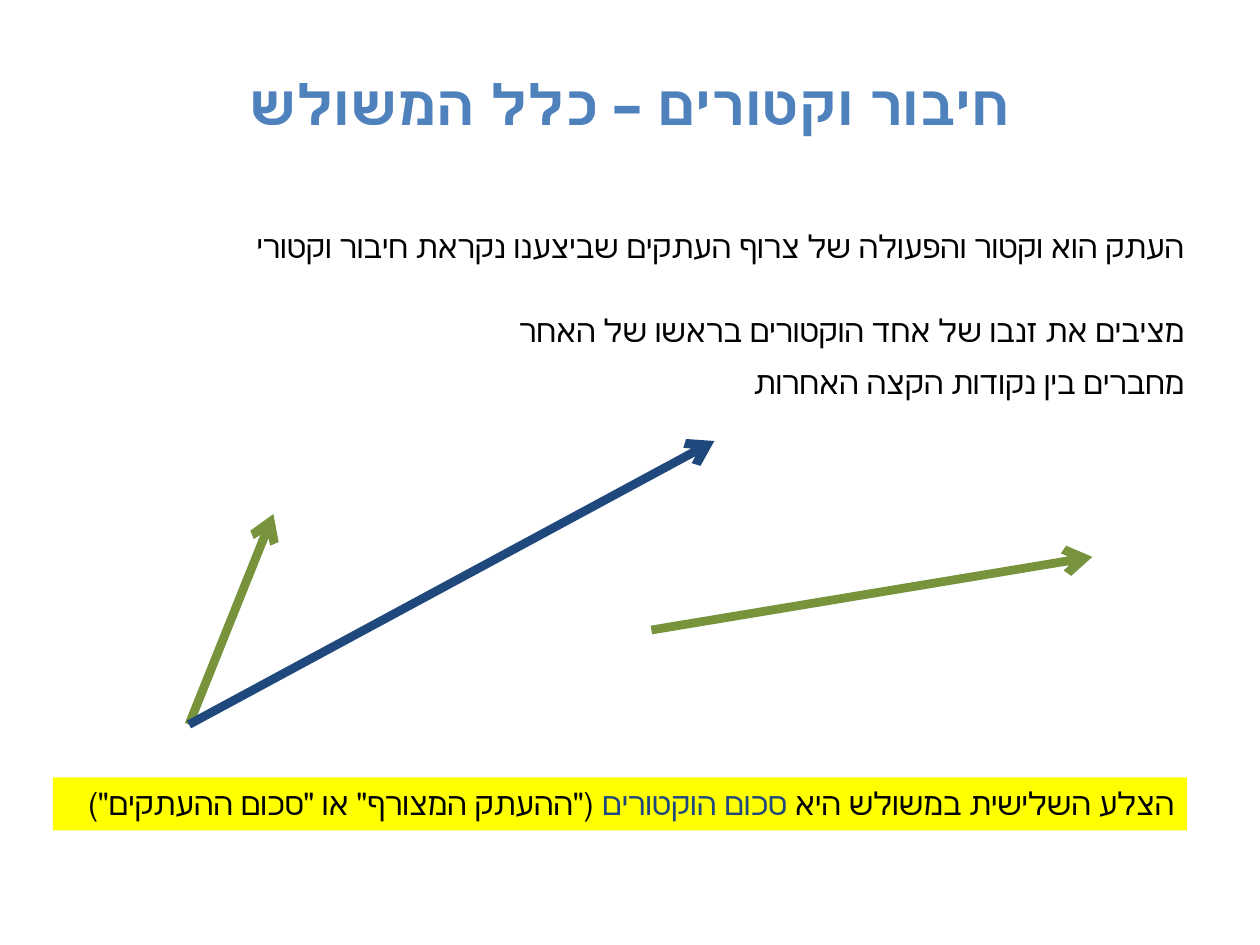
import pptx
import pptx.util
import pptx.dml.color
import pptx.enum.dml
import pptx.enum.lang
import pptx.enum.shapes
import pptx.enum.text
import pptx.oxml
import pptx.oxml.ns

Inches = pptx.util.Inches
Align = pptx.enum.text.PP_ALIGN
Anchor = pptx.enum.text.MSO_ANCHOR

FONT = "Calibri"
BLACK, BLUE, NAVY = "000000", "4F81BD", "1F497D"
GREEN, YELLOW = "77933C", "FFFF00"


def color(value):
    """Turn a hex string into an RGB colour."""
    return pptx.dml.color.RGBColor.from_string(value)


def add_child(parent, tag, **attributes):
    """Append an empty DrawingML element with the given attributes."""
    child = pptx.oxml.parse_xml(f"<a:{tag} {pptx.oxml.ns.nsdecls('a')}/>")
    for name, value in attributes.items():
        child.set(name, value)
    parent.append(child)


def write_line(shape, parts, size, alignment, anchor, bold=False):
    """Write one right-to-left paragraph made of (text, colour) parts."""
    frame = shape.text_frame
    frame.word_wrap = True
    frame.vertical_anchor = anchor
    paragraph = frame.paragraphs[0]
    paragraph.alignment = alignment
    paragraph.space_before = pptx.util.Pt(size * 0.2)
    paragraph._p.get_or_add_pPr().set("rtl", "1")
    for text, text_color in parts:
        run = paragraph.add_run()
        run.text = text
        font = run.font
        font.name = FONT
        font.size = pptx.util.Pt(size)
        font.bold = bold
        font.color.rgb = color(text_color)
        font.language_id = pptx.enum.lang.MSO_LANGUAGE_ID.HEBREW


def add_title(slide, left, top, width, height):
    """Add the centred slide title."""
    shape = slide.shapes.add_textbox(left, top, width, height)
    parts = [("חיבור וקטורים – כלל המשולש", BLUE)]
    write_line(shape, parts, 32, Align.CENTER, Anchor.MIDDLE, bold=True)


def add_explanations(slide, left, top, width, height):
    """Add the definition and the two construction steps."""
    lines = [
        (0, "העתק הוא וקטור והפעולה של צרוף העתקים שביצענו נקראת חיבור וקטורי"),
        (0.67, "מציבים את זנבו של אחד הוקטורים בראשו של האחר"),
        (1.08, "מחברים בין נקודות הקצה האחרות"),
    ]
    for offset, text in lines:
        shape = slide.shapes.add_textbox(left, top + Inches(offset), width, height)
        write_line(shape, [(text, BLACK)], 18, Align.RIGHT, Anchor.TOP)


def add_vectors(slide, left, top):
    """Draw the two green vectors and their navy sum."""
    vectors = [
        ((0, 2.25), (0.67, 0.58), GREEN),
        ((3.67, 1.5), (7.17, 0.92), GREEN),
        ((0, 2.25), (4.17, 0), NAVY),
    ]
    for (tail_x, tail_y), (head_x, head_y), line_color in vectors:
        vector = slide.shapes.add_connector(
            pptx.enum.shapes.MSO_CONNECTOR.STRAIGHT,
            left + Inches(tail_x), top + Inches(tail_y),
            left + Inches(head_x), top + Inches(head_y))
        vector.line.color.rgb = color(line_color)
        vector.line.width = pptx.util.Pt(5)
        add_child(vector.line._get_or_add_ln(), "tailEnd", type="arrow")
        add_child(vector._element.spPr, "effectLst")


def add_conclusion(slide, left, top, width, height):
    """Add the yellow bar that names the vector sum."""
    bar = slide.shapes.add_shape(
        pptx.enum.shapes.MSO_SHAPE.RECTANGLE, left, top, width, height)
    bar.shadow.inherit = False
    bar.fill.solid()
    bar.fill.fore_color.rgb = color(YELLOW)
    bar.line.fill.background()
    parts = [
        ("הצלע השלישית במשולש היא ", BLACK),
        ("סכום הוקטורים ", NAVY),
        ('("ההעתק המצורף" או "סכום ההעתקים")', BLACK),
    ]
    write_line(bar, parts, 18, Align.RIGHT, Anchor.TOP)


def main():
    """Build and save the slide."""
    presentation = pptx.Presentation()
    presentation.slide_width = Inches(10)
    presentation.slide_height = Inches(7.5)
    slide = presentation.slides.add_slide(presentation.slide_layouts[6])
    add_title(slide, Inches(0.5), Inches(0.3), Inches(9), Inches(1.03))
    add_explanations(slide, Inches(0.5), Inches(1.75), Inches(9), Inches(0.42))
    add_vectors(slide, Inches(1.5), Inches(3.5))
    add_conclusion(slide, Inches(0.42), Inches(6.17), Inches(9), Inches(0.42))
    presentation.save("out.pptx")


if __name__ == "__main__":
    main()
